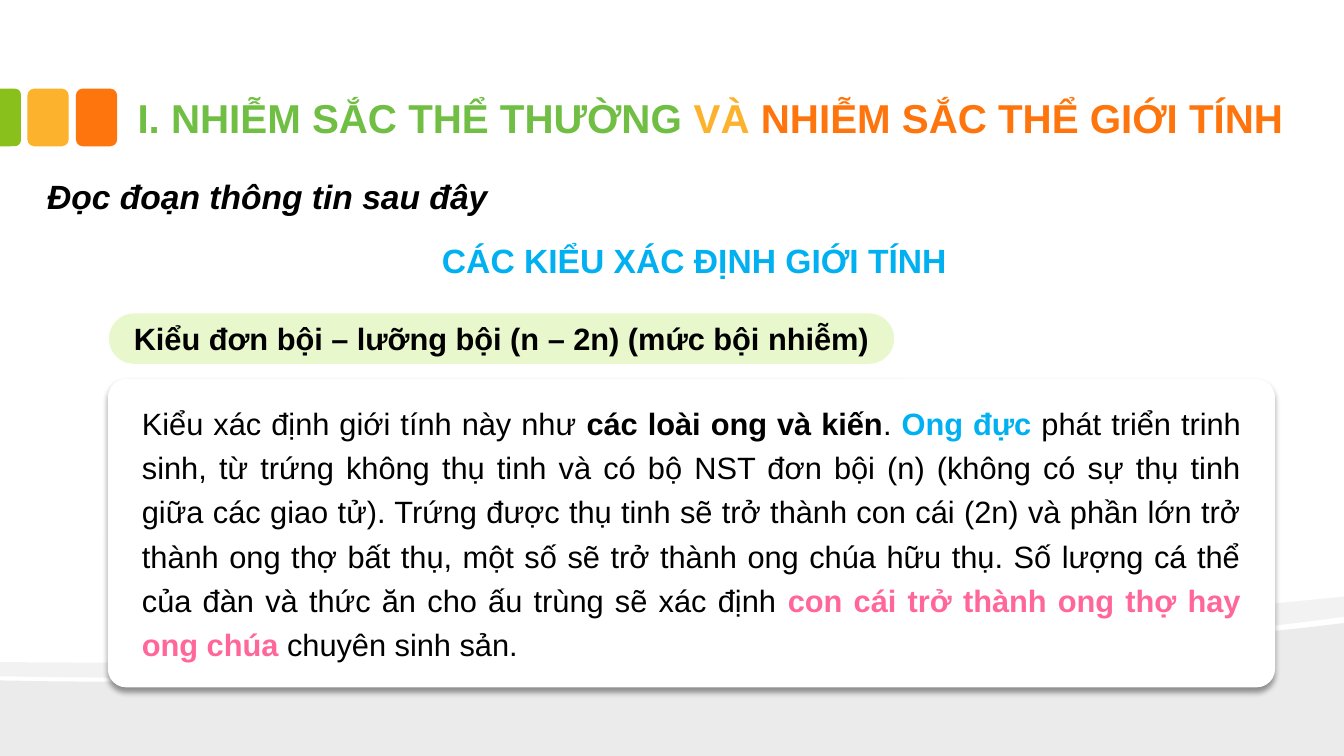
from lxml.etree import SubElement
from pptx import Presentation
from pptx.dml.color import RGBColor
from pptx.enum.shapes import MSO_SHAPE as Preset
from pptx.enum.text import MSO_ANCHOR as Anchor, MSO_AUTO_SIZE as AutoSize, PP_ALIGN as Align
from pptx.oxml.ns import qn
from pptx.util import Pt

BLACK = RGBColor(0x00, 0x00, 0x00)
WHITE = RGBColor(0xFF, 0xFF, 0xFF)
GREEN = RGBColor(0x70, 0xBE, 0x43)
LIME = RGBColor(0x89, 0xC0, 0x1C)
AMBER = RGBColor(0xFC, 0xB2, 0x2C)
ORANGE = RGBColor(0xFE, 0x75, 0x0E)
BLUE = RGBColor(0x00, 0xB0, 0xF0)
PINK = RGBColor(0xFF, 0x66, 0x99)
PALE_GREEN = RGBColor(0xE9, 0xF8, 0xCC)

SLIDE_WIDTH, SLIDE_HEIGHT = 960, 540

TITLE = [
    ("I. NHIỄM SẮC THỂ THƯỜNG ", GREEN, True),
    ("VÀ ", AMBER, True),
    ("NHIỄM SẮC THỂ GIỚI TÍNH", ORANGE, True),
]
INSTRUCTION = [("Đọc đoạn thông tin sau đây", BLACK, True)]
HEADING = [("CÁC KIỂU XÁC ĐỊNH GIỚI TÍNH ", BLUE, True)]
TYPE_LABEL = [("Kiểu đơn bội – lưỡng bội (n – 2n) (mức bội nhiễm)", BLACK, True)]
EXPLANATION = [
    ("Kiểu xác định giới tính này như ", BLACK, False),
    ("các loài ong và kiến", BLACK, True),
    (". ", BLACK, False),
    ("Ong đực ", BLUE, True),
    ("phát triển trinh sinh, từ trứng không thụ tinh và có bộ NST đơn bội (n) "
     "(không có sự thụ tinh giữa các giao tử). Trứng được thụ tinh sẽ trở thành "
     "con cái (2n) và phần lớn trở thành ong thợ bất thụ, một số sẽ trở thành ong "
     "chúa hữu thụ. Số lượng cá thể của đàn và thức ăn cho ấu trùng sẽ xác định ",
     BLACK, False),
    ("con cái trở thành ong thợ hay ong chúa", PINK, True),
    (" chuyên sinh sản.", BLACK, False),
]

HILL = [(960, 445), (960, 540), (0, 540), (0, 486),
        (253.4, 491.8, 750.2, 471.6, 960, 445)]
RIDGE = [(960, 426.2), (960, 440.6),
         (903.6, 448.6, 827.3, 455.8, 740.9, 461.5),
         (502.6, 477.4, 185.8, 487.4, 0, 483.1),
         (0, 473),
         (469.4, 476.6, 699.1, 451.4, 960, 426.2)]
LANDSCAPE = [(HILL, 8), (RIDGE, 5)]
CURVE_STEPS = 24

BLOCK_TOP, BLOCK_WIDTH, BLOCK_HEIGHT, BLOCK_PITCH = 63.3, 29.5, 41.2, 34.6
EDGE_WIDTH = 15
BLOCKS = [AMBER, ORANGE]


def flatten(outline):
    points = [outline[0]]
    for segment in outline[1:]:
        if len(segment) == 2:
            points.append(segment)
            continue
        controls = [points[-1], segment[:2], segment[2:4], segment[4:]]
        for step in range(1, CURVE_STEPS + 1):
            t = step / CURVE_STEPS
            weights = [(1 - t) ** 3, 3 * t * (1 - t) ** 2, 3 * t * t * (1 - t), t ** 3]
            points.append(tuple(sum(w * c[axis] for w, c in zip(weights, controls))
                                for axis in (0, 1)))
    return [(Pt(x), Pt(y)) for x, y in points]


def set_alpha(color_element, percent):
    SubElement(color_element, qn("a:alpha"), val=str(percent * 1000))


def paint(shape, color):
    shape.shadow.inherit = False
    shape.fill.solid()
    shape.fill.fore_color.rgb = color
    shape.line.fill.background()
    return shape


def add_panel(preset, box, color, adjustment=None):
    panel = paint(slide.shapes.add_shape(preset, *map(Pt, box)), color)
    if adjustment is not None:
        panel.adjustments[0] = adjustment
    return panel


def write(holder, runs, size, italic=None, frame_format=None, paragraph_format=None):
    frame = holder.text_frame
    paragraph = frame.paragraphs[0]
    for target, values in ((frame, frame_format), (paragraph, paragraph_format)):
        for name, value in (values or {}).items():
            setattr(target, name, value)
    for text, color, bold in runs:
        run = paragraph.add_run()
        run.text = text
        font_format = {"name": "Arial", "size": Pt(size), "bold": bold, "italic": italic}
        for name, value in font_format.items():
            setattr(run.font, name, value)
        run.font.color.rgb = color


def add_passage(box, runs, size, italic=None, **paragraph_format):
    passage = slide.shapes.add_textbox(*map(Pt, box))
    write(passage, runs, size, italic,
          {"word_wrap": True, "auto_size": AutoSize.SHAPE_TO_FIT_TEXT}, paragraph_format)


deck = Presentation()
deck.slide_width, deck.slide_height = Pt(SLIDE_WIDTH), Pt(SLIDE_HEIGHT)
slide = deck.slides.add_slide(deck.slide_layouts[5])

for outline, opacity in LANDSCAPE:
    start, *rest = flatten(outline)
    builder = slide.shapes.build_freeform(*start)
    builder.add_line_segments(rest, close=True)
    land = paint(builder.convert_to_shape(), BLACK)
    set_alpha(land.fill._xPr.find(".//" + qn("a:srgbClr")), opacity)

edge_offset = (BLOCK_HEIGHT - EDGE_WIDTH) / 2
edge = add_panel(Preset.ROUND_2_SAME_RECTANGLE,
                 (-edge_offset, BLOCK_TOP + edge_offset, BLOCK_HEIGHT, EDGE_WIDTH), LIME, 0.29)
edge.rotation = 90
for index, color in enumerate(BLOCKS):
    add_panel(Preset.ROUNDED_RECTANGLE,
              (19.6 + index * BLOCK_PITCH, BLOCK_TOP, BLOCK_WIDTH, BLOCK_HEIGHT), color)

title = slide.shapes.title
title_place = {"left": 88.6, "top": 49, "width": 877.7, "height": 56.9}
for name, value in title_place.items():
    setattr(title, name, Pt(value))
write(title, TITLE, 28.8,
      frame_format={"vertical_anchor": Anchor.BOTTOM, "auto_size": AutoSize.NONE,
                    "word_wrap": True, "margin_left": Pt(9.6), "margin_right": Pt(9.6),
                    "margin_top": Pt(4.8), "margin_bottom": Pt(4.8)},
      paragraph_format={"alignment": Align.LEFT, "line_spacing": 1.2})

add_passage((26.6, 122.4, 391, 36), INSTRUCTION, 24, True)
add_passage((303.8, 167.8, 391, 36), HEADING, 24, alignment=Align.CENTER)

card = add_panel(Preset.ROUNDED_RECTANGLE, (77, 270.7, 833.8, 220.3), WHITE, 0.06)
effects = card._element.spPr.find(qn("a:effectLst"))
shadow = SubElement(effects, qn("a:outerShdw"), blurRad=str(Pt(4)), dist=str(Pt(3)),
                    dir="5400000", algn="t", rotWithShape="0")
set_alpha(SubElement(shadow, qn("a:srgbClr"), val=str(BLACK)), 40)

label = add_panel(Preset.ROUNDED_RECTANGLE, (77.8, 223.9, 560.9, 36), PALE_GREEN, 0.5)
write(label, TYPE_LABEL, 22,
      frame_format={"vertical_anchor": Anchor.MIDDLE, "word_wrap": True},
      paragraph_format={"alignment": Align.CENTER})

add_passage((94.3, 280, 799.2, 196.6), EXPLANATION, 22,
            alignment=Align.JUSTIFY, line_spacing=1.2)

deck.save("out.pptx")
